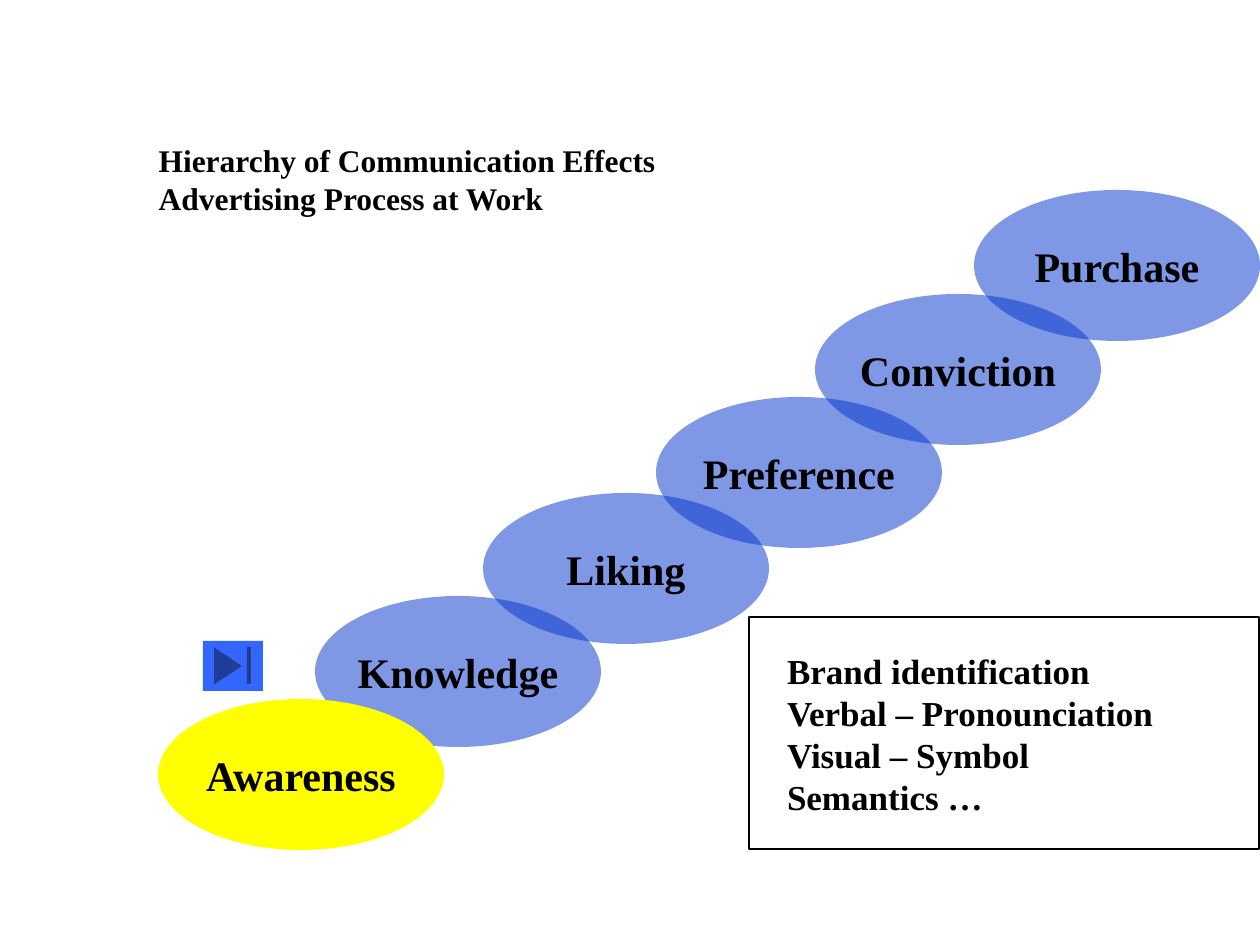
from lxml.etree import SubElement
from pptx import Presentation
from pptx.dml.color import RGBColor
from pptx.enum.shapes import MSO_SHAPE as Preset
from pptx.enum.text import MSO_ANCHOR as Anchor, PP_ALIGN as Align
from pptx.oxml.ns import qn
from pptx.util import Emu, Pt

EMU_PER_PX = 914400 / 126
STAGE_WIDTH, STAGE_HEIGHT = 286, 151
STAGES = [
    ("Knowledge", 315, 596),
    ("Liking", 483, 493),
    ("Preference", 656, 397),
    ("Conviction", 815, 294),
    ("Purchase", 974, 190),
]


def px(length):
    return Emu(round(length * EMU_PER_PX))


def color(hex_string):
    return RGBColor.from_string(hex_string)


class SlideBuilder:
    font_name = "Times New Roman"
    text_color = "000000"

    def __init__(self, slide):
        self.slide = slide

    def set_text(self, shape, text, size, align=Align.LEFT, anchor=Anchor.TOP, wrap=True):
        frame = shape.text_frame
        frame.text = text
        frame.word_wrap = wrap
        frame.vertical_anchor = anchor
        for paragraph in frame.paragraphs:
            paragraph.alignment = align
            for run in paragraph.runs:
                run.font.name = self.font_name
                run.font.size = Pt(size)
                run.font.bold = True
                run.font.color.rgb = color(self.text_color)

    def title(self, text, left, top, width, height):
        shape = self.slide.shapes.title
        shape.left, shape.top = px(left), px(top)
        shape.width, shape.height = px(width), px(height)
        self.set_text(shape, text, 18)

    def shape(self, preset, left, top, width, height, fill, opacity=100):
        """Add a filled shape without outline; opacity is a percentage."""
        shape = self.slide.shapes.add_shape(
            preset, px(left), px(top), px(width), px(height))
        shape.shadow.inherit = False
        shape.fill.solid()
        shape.fill.fore_color.rgb = color(fill)
        shape.line.fill.background()
        if opacity < 100:
            fill_color = shape.element.spPr.find(f".//{qn('a:srgbClr')}")
            SubElement(fill_color, qn("a:alpha"), val=str(opacity * 1000))
        return shape

    def stage(self, name, left, top, fill, opacity=100):
        shape = self.shape(Preset.OVAL, left, top, STAGE_WIDTH, STAGE_HEIGHT,
                           fill, opacity)
        self.set_text(shape, name, 24, Align.CENTER, Anchor.MIDDLE, wrap=False)

    def note_box(self, text, left, top, width, height):
        shape = self.shape(Preset.RECTANGLE, left, top, width, height, "FFFFFF")
        shape.line.color.rgb = color("000000")
        shape.line.width = Pt(0.75)
        frame = shape.text_frame
        frame.margin_left = frame.margin_right = px(38)
        frame.margin_top = frame.margin_bottom = px(32)
        self.set_text(shape, text, 20)


def main():
    presentation = Presentation()
    presentation.slide_width, presentation.slide_height = px(1260), px(945)
    title_only = presentation.slide_layouts[5]
    builder = SlideBuilder(presentation.slides.add_slide(title_only))

    builder.title("Hierarchy of Communication Effects\nAdvertising Process at Work",
                  146, 135, 630, 88)
    for name, left, top in STAGES:
        builder.stage(name, left, top, "0033CC", opacity=50)
    builder.stage("Awareness", 158, 699, "FFFF00")
    builder.note_box("Brand identification\nVerbal – Pronounciation\n"
                     "Visual – Symbol\nSemantics …", 749, 617, 510, 232)
    builder.shape(Preset.ACTION_BUTTON_END, 203, 641, 60, 50, "3366FF")

    presentation.save("out.pptx")


if __name__ == "__main__":
    main()
